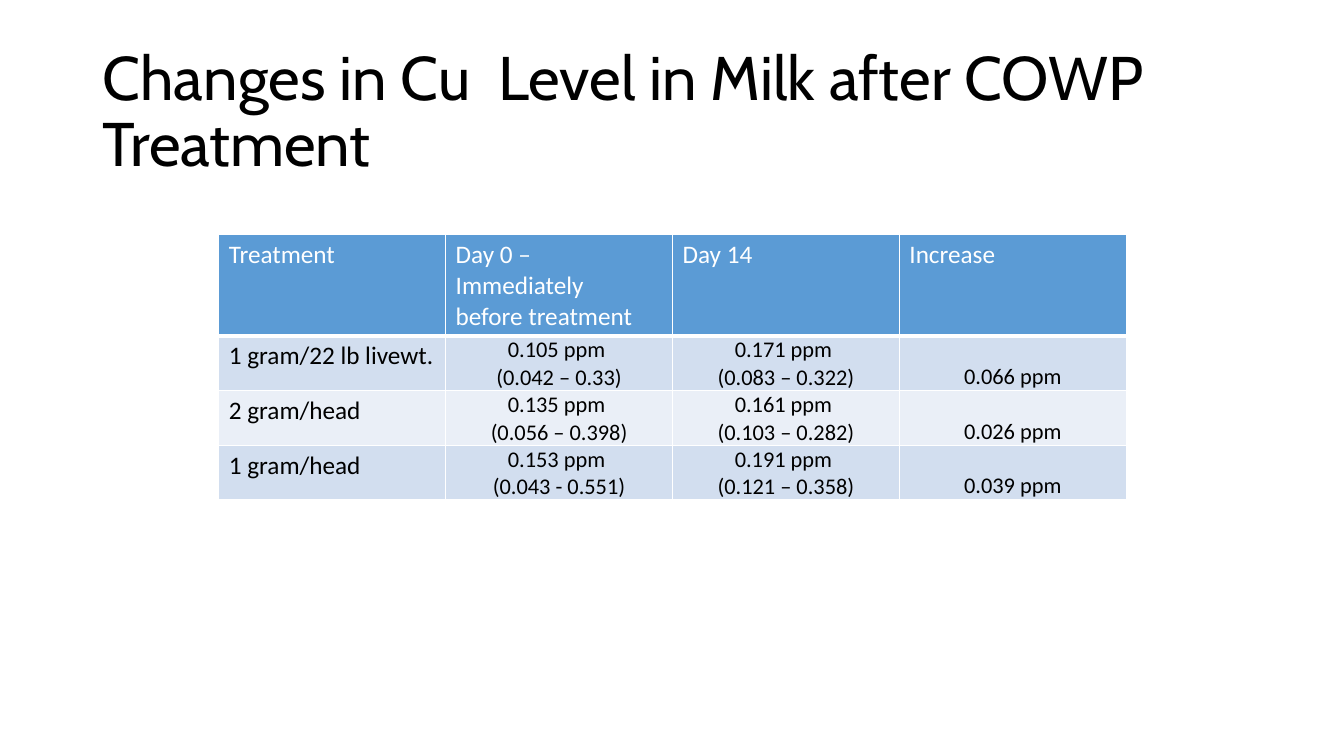
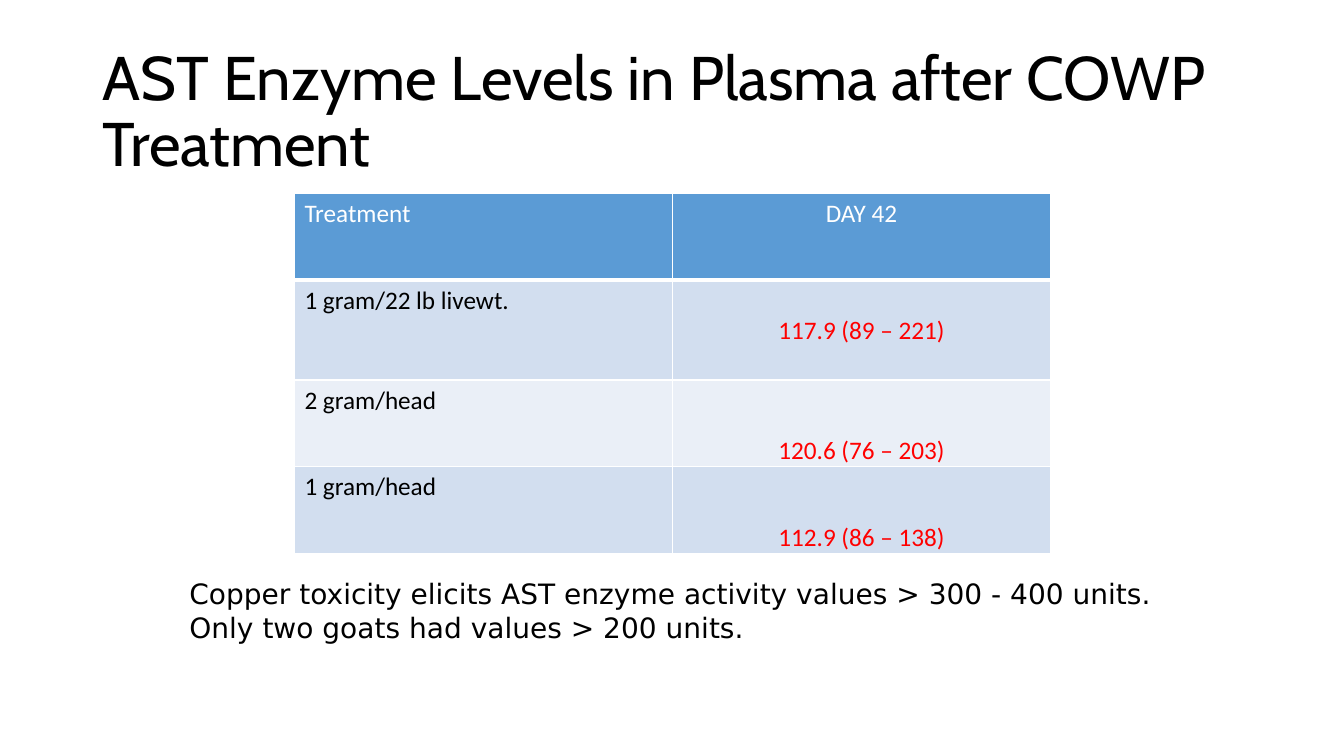
from dataclasses import dataclass, replace

from lxml import etree
from pptx import Presentation
from pptx.dml.color import RGBColor
from pptx.enum.text import MSO_ANCHOR, PP_ALIGN
from pptx.oxml.ns import qn
from pptx.util import Inches, Pt

TOP, MIDDLE, BOTTOM = MSO_ANCHOR.TOP, MSO_ANCHOR.MIDDLE, MSO_ANCHOR.BOTTOM
LEFT, CENTER = PP_ALIGN.LEFT, PP_ALIGN.CENTER

COLORS = {
    "black": "000000",
    "white": "FFFFFF",
    "red": "FF0000",
    "head": "5B9BD5",
    "odd": "D2DEEF",
    "even": "EAEFF7",
}


@dataclass(frozen=True)
class Style:
    size: int
    font: str = "Calibri"
    color: str = "black"
    align: PP_ALIGN = LEFT
    anchor: MSO_ANCHOR = TOP
    inset: tuple = (0.1, 0.05, 0.1, 0.05)
    line: float = 1.0


@dataclass(frozen=True)
class Grid:
    left: float
    top: float
    width: float
    heights: list
    rows: list
    head: list
    body: list


# Text styles
TITLE = Style(44, "Cabin", anchor=MIDDLE, line=0.9)
NOTE = Style(20, "DejaVu Sans")
HEAD = Style(18, color="white")
LABEL = Style(18)
VALUE = Style(16, align=CENTER, anchor=BOTTOM, inset=(0.01, 0.01, 0.01, 0))
ALERT = replace(VALUE, size=18, color="red")

# Tables
MILK = Grid(
    2.17, 2.33, 9, [1, 0.54, 0.54, 0.54],
    [
        ["Treatment", "Day 0 – Immediately\vbefore treatment", "Day 14", "Increase"],
        ["1 gram/22 lb livewt.", "0.105 ppm \n(0.042 – 0.33)",
         "0.171 ppm \n(0.083 – 0.322)", "0.066 ppm"],
        ["2 gram/head", "0.135 ppm \n(0.056 – 0.398)",
         "0.161 ppm \n(0.103 – 0.282)", "0.026 ppm"],
        ["1 gram/head", "0.153 ppm \n(0.043 - 0.551)",
         "0.191 ppm \n(0.121 – 0.358)", "0.039 ppm"],
    ],
    [HEAD] * 4,
    [LABEL, VALUE, VALUE, VALUE],
)
PLASMA = Grid(
    2.92, 1.92, 7.5, [0.86, 0.99, 0.86, 0.86],
    [
        ["Treatment", "DAY 42"],
        ["1 gram/22 lb livewt.", "117.9 (89 – 221)"],
        ["2 gram/head", "120.6 (76 – 203)"],
        ["1 gram/head", "112.9 (86 – 138)"],
    ],
    [HEAD, replace(HEAD, align=CENTER)],
    [LABEL, ALERT],
)


def rgb(name: str) -> RGBColor:
    return RGBColor.from_string(COLORS[name])


def set_text(frame, text: str, style: Style) -> None:
    frame.text = text
    for para in frame.paragraphs:
        para.alignment = style.align
        para.line_spacing = style.line
        for run in para.runs:
            run.font.name = style.font
            run.font.size = Pt(style.size)
            run.font.bold = False
            run.font.color.rgb = rgb(style.color)


def add_text(slide, box: tuple, text: str, style: Style) -> None:
    frame = slide.shapes.add_textbox(*map(Inches, box)).text_frame
    frame.word_wrap = True
    frame.vertical_anchor = style.anchor
    set_text(frame, text, style)


def set_edges(cell, base: int) -> None:
    """Draw white cell borders; base is the width of the lower one."""
    props = cell._tc.get_or_add_tcPr()
    for i, (side, width) in enumerate([("L", 1), ("R", 1), ("T", 1), ("B", base)]):
        edge = etree.Element(qn(f"a:ln{side}"), w=str(Pt(width)))
        fill = etree.SubElement(edge, qn("a:solidFill"))
        etree.SubElement(fill, qn("a:srgbClr"), val=COLORS["white"])
        props.insert(i, edge)


def set_cell(cell, text: str, style: Style, fill: str, base: int) -> None:
    set_text(cell.text_frame, text, style)
    cell.vertical_anchor = style.anchor
    (cell.margin_left, cell.margin_top,
     cell.margin_right, cell.margin_bottom) = map(Inches, style.inset)
    cell.fill.solid()
    cell.fill.fore_color.rgb = rgb(fill)
    set_edges(cell, base)


def add_grid(slide, grid: Grid):
    count = len(grid.head)
    table = slide.shapes.add_table(
        len(grid.rows), count, Inches(grid.left), Inches(grid.top),
        Inches(grid.width), Inches(sum(grid.heights))).table
    for col in table.columns:
        col.width = Inches(grid.width / count)
    for r, (height, texts) in enumerate(zip(grid.heights, grid.rows)):
        table.rows[r].height = Inches(height)
        styles = grid.body if r else grid.head
        fill = ("even", "odd")[r % 2] if r else "head"
        for c, (text, style) in enumerate(zip(texts, styles)):
            set_cell(table.cell(r, c), text, style, fill, 1 if r else 3)
    return table


def add_slide(deck, title: str):
    slide = deck.slides.add_slide(deck.slide_layouts[6])
    add_text(slide, (0.92, 0.4, 11.5, 1.45), title, TITLE)
    return slide


def main() -> None:
    deck = Presentation()
    deck.slide_width, deck.slide_height = Inches(13.33), Inches(7.5)

    # Copper in milk
    slide = add_slide(deck, "Changes in Cu  Level in Milk after COWP Treatment")
    add_grid(slide, MILK)

    # Enzyme in plasma
    slide = add_slide(deck, "AST Enzyme Levels in Plasma after COWP Treatment")
    table = add_grid(slide, PLASMA)
    table.cell(1, 1).vertical_anchor = MIDDLE
    add_text(slide, (1.78, 5.67, 9.89, 0.77),
             "Copper toxicity elicits AST enzyme activity values > 300 - 400 units.\n"
             "Only two goats had values > 200 units.", NOTE)

    deck.save("out.pptx")


if __name__ == "__main__":
    main()
